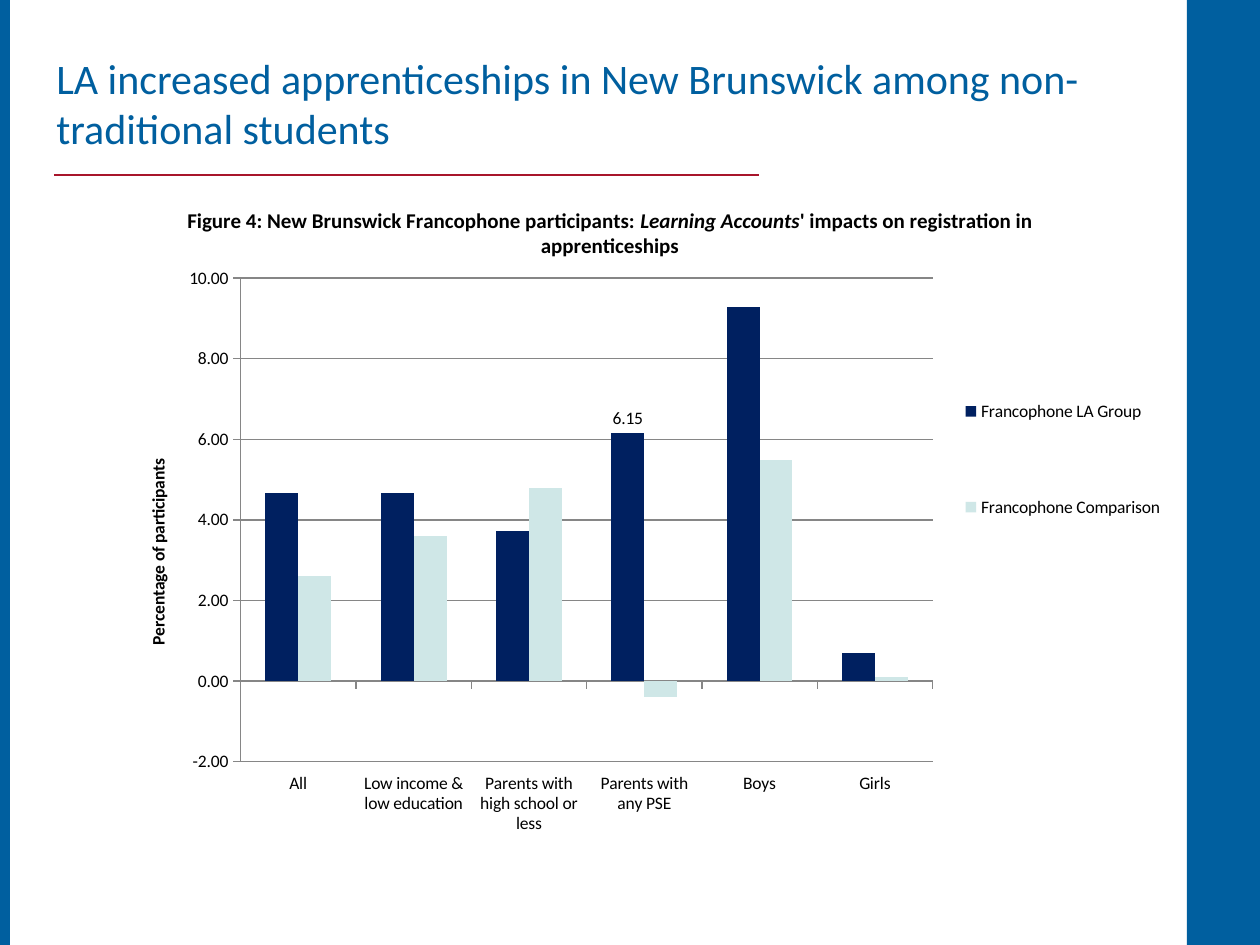
import pptx
import pptx.util
import pptx.chart.data
import pptx.dml.color
import pptx.enum.chart
import pptx.enum.shapes
import pptx.enum.text
import pptx.oxml
import pptx.oxml.ns
import lxml.etree

PX = 914400 / 126
HUES = {"blue": "005F9F", "red": "A8152B", "navy": "002060", "pale": "CFE7E7",
        "grid": "868686", "black": "000000", "white": "FFFFFF"}
qn = pptx.oxml.ns.qn
Pt = pptx.util.Pt


def paint(part, hue):
    """Give a fill or a line one solid colour."""
    part.solid()
    part.fore_color.rgb = pptx.dml.color.RGBColor.from_string(HUES[hue])


def place(node, spot, **box):
    """Put a manual layout at child index spot, in shares of the chart."""
    for old in node.findall(qn("c:layout")):
        node.remove(old)
    layout = lxml.etree.Element(qn("c:layout"))
    manual = lxml.etree.SubElement(layout, qn("c:manualLayout"))
    if node.tag == qn("c:plotArea"):
        lxml.etree.SubElement(manual, qn("c:layoutTarget")).set("val", "inner")
    for key in ("xMode", "yMode"):
        lxml.etree.SubElement(manual, qn("c:" + key)).set("val", "edge")
    for key, val in box.items():
        lxml.etree.SubElement(manual, qn("c:" + key)).set("val", str(val))
    node.insert(spot, layout)


deck = pptx.Presentation()
deck.slide_width, deck.slide_height = int(1260 * PX), int(945 * PX)
slide = deck.slides.add_slide(deck.slide_layouts[6])
shapes = slide.shapes

# Side bands
for left, wide in ((1187, 73), (0, 10)):
    band = shapes.add_shape(pptx.enum.shapes.MSO_SHAPE.RECTANGLE,
                            int(left * PX), 0, int(wide * PX), int(945 * PX))
    band.shadow.inherit = False
    paint(band.fill, "blue")
    band.line.fill.background()

# Rule under the heading
rule = shapes.add_connector(pptx.enum.shapes.MSO_CONNECTOR.STRAIGHT,
                            int(54 * PX), int(175 * PX), int(759 * PX), int(175 * PX))
paint(rule.line.fill, "red")
rule.line.width = Pt(0.75)
lxml.etree.SubElement(rule._element.spPr, qn("a:effectLst"))

# Heading
head = shapes.add_textbox(int(44 * PX), int(42 * PX), int(1110 * PX), int(121 * PX))
frame = head.text_frame
frame.word_wrap = True
frame.vertical_anchor = pptx.enum.text.MSO_ANCHOR.MIDDLE
frame.text = "LA increased apprenticeships in New Brunswick among non-traditional students"
font = frame.paragraphs[0].runs[0].font
font.name, font.size = "Calibri", Pt(24)
paint(font.fill, "blue")

# Chart
data = pptx.chart.data.CategoryChartData(number_format="0.00")
data.categories = ["All", "Low income & low education", "Parents with high school or less",
                   "Parents with any PSE", "Boys", "Girls"]
data.add_series("Francophone LA Group", (4.68, 4.67, 3.73, 6.15, 9.28, 0.69))
data.add_series("Francophone Comparison", (2.6, 3.6, 4.8, -0.4, 5.5, 0.1))
chart = shapes.add_chart(pptx.enum.chart.XL_CHART_TYPE.COLUMN_CLUSTERED,
                         int(35 * PX), int(195 * PX), int(1142 * PX), int(724 * PX),
                         data).chart
chart.font.name, chart.font.size = "Calibri", Pt(10)
paint(chart.font.fill, "black")
place(chart._chartSpace.chart.plotArea, 0, x=0.18, y=0.115, w=0.606, h=0.668)

# Columns
plot = chart.plots[0]
plot.gap_width, plot.overlap = 150, 0
plot.vary_by_categories = False
for ser, hue in zip(plot.series, ("navy", "pale")):
    ser.invert_if_negative = False
    paint(ser.format.fill, hue)
first = plot.series[0]
label = first.points[3].data_label
label.position = pptx.enum.chart.XL_LABEL_POSITION.OUTSIDE_END
label.font.size = Pt(10)
first.data_labels.show_value = False

# Axes
cat, val = chart.category_axis, chart.value_axis
cat.tick_label_position = pptx.enum.chart.XL_TICK_LABEL_POSITION.LOW
val.minimum_scale, val.maximum_scale, val.major_unit = -2, 10, 2
val.tick_labels.number_format = "0.00"
val.tick_labels.number_format_is_linked = False
val.has_major_gridlines = True
for part in (cat, val, val.major_gridlines):
    paint(part.format.line.fill, "grid")
    part.format.line.width = Pt(0.75)
for axis in (cat, val):
    axis.major_tick_mark = pptx.enum.chart.XL_TICK_MARK.OUTSIDE

# Chart title and axis title
chart.has_title = True
para = chart.chart_title.text_frame.paragraphs[0]
for text, slant in (("Figure 4: New Brunswick Francophone participants: ", False),
                    ("Learning Accounts", True),
                    ("' impacts on registration in apprenticeships", False)):
    run = para.add_run()
    run.text = text
    run.font.italic = slant
    run.font.size = Pt(12)
name = val.axis_title.text_frame
name.text = "Percentage of participants"
name.paragraphs[0].runs[0].font.size = Pt(10)
for run in (*para.runs, *name.paragraphs[0].runs):
    run.font.bold = True
    run.font.name = "Calibri"
    paint(run.font.fill, "black")
place(chart.chart_title._element, 1, x=0.13, y=0.01)
place(val.axis_title._element, 1, x=0.095, y=0.36)

# Legend
chart.has_legend = True
chart.legend.position = pptx.enum.chart.XL_LEGEND_POSITION.RIGHT
chart.legend.include_in_layout = False
place(chart.legend._element, 1, x=0.81, y=0.18, w=0.18, h=0.37)

deck.save("out.pptx")
